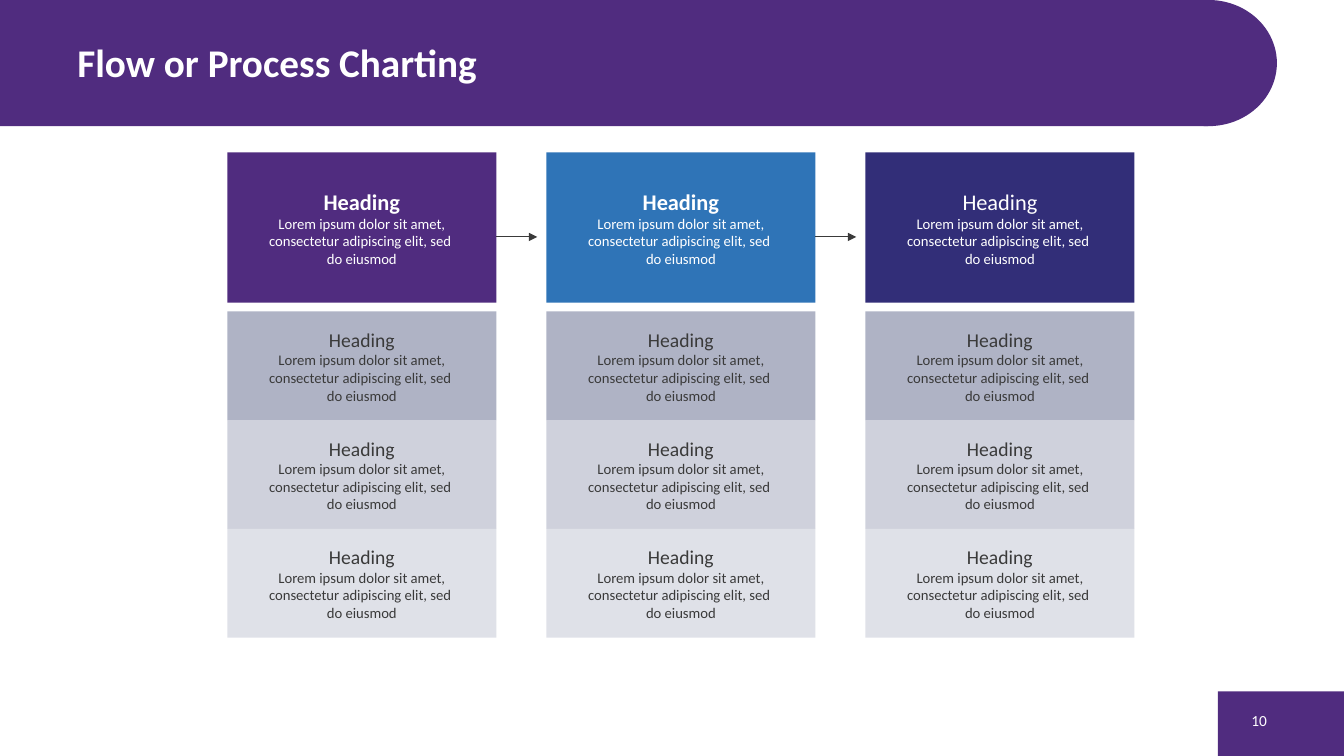
from lxml import etree
from pptx import Presentation
from pptx import util as u
from pptx.dml.color import RGBColor
from pptx.enum import shapes, text
from pptx.oxml.ns import qn

COLOURS = {
    "purple": "502C7F", "blue": "2F74B7", "navy": "322E78",
    "dark_row": "AFB3C5", "mid_row": "CFD1DC", "light_row": "DFE1E8",
    "ink": "3A3A3A", "white": "FFFFFF",
}
BODY = "Lorem ipsum dolor sit amet, consectetur adipiscing elit, sed \ndo eiusmod"


class SlideBuilder:
    font_name = "Calibri"

    def __init__(self, slide):
        self.slide = slide

    def colour(self, name):
        return RGBColor.from_string(COLOURS[name])

    def style(self, paragraph, size, colour, bold=False, align=text.PP_ALIGN.LEFT):
        paragraph.alignment = align
        for run in paragraph.runs:
            run.font.name = self.font_name
            run.font.size = u.Pt(size)
            run.font.bold = bold
            run.font.color.rgb = self.colour(colour)

    def block(self, left, top, width, height, fill,
              preset=shapes.MSO_SHAPE.RECTANGLE):
        """Add a plain filled shape without outline."""
        shape = self.slide.shapes.add_shape(
            preset, u.Cm(left), u.Cm(top), u.Cm(width), u.Cm(height))
        shape.shadow.inherit = False
        shape.fill.solid()
        shape.fill.fore_color.rgb = self.colour(fill)
        shape.line.fill.background()
        return shape

    def card(self, left, top, width, height, fill, ink, heading_size, bold=False):
        """Add a block with a centred heading and body text."""
        frame = self.block(left, top, width, height, fill).text_frame
        frame.word_wrap = True
        frame.vertical_anchor = text.MSO_ANCHOR.MIDDLE
        frame.margin_left = frame.margin_right = u.Cm(0.51)
        frame.margin_top = frame.margin_bottom = u.Cm(0.13)
        heading = frame.paragraphs[0]
        heading.text = "Heading"
        self.style(heading, heading_size, ink, bold, text.PP_ALIGN.CENTER)
        body = frame.add_paragraph()
        body.text = BODY
        self.style(body, 10.5, ink, align=text.PP_ALIGN.CENTER)

    def label(self, left, top, width, height, words, size, bold=False,
              align=text.PP_ALIGN.LEFT):
        box = self.slide.shapes.add_textbox(
            u.Cm(left), u.Cm(top), u.Cm(width), u.Cm(height))
        frame = box.text_frame
        frame.word_wrap = True
        frame.vertical_anchor = text.MSO_ANCHOR.MIDDLE
        frame.text = words
        self.style(frame.paragraphs[0], size, "white", bold, align)

    def arrow(self, start, end, y):
        connector = self.slide.shapes.add_connector(
            shapes.MSO_CONNECTOR.STRAIGHT,
            u.Cm(start), u.Cm(y), u.Cm(end), u.Cm(y))
        connector.line.color.rgb = self.colour("ink")
        connector.line.width = u.Pt(0.75)
        tail = etree.SubElement(connector.line._get_or_add_ln(), qn("a:tailEnd"))
        tail.set("type", "triangle")
        etree.SubElement(connector._element.spPr, qn("a:effectLst"))


def main():
    deck = Presentation()
    deck.slide_width, deck.slide_height = u.Cm(33.87), u.Cm(19.05)
    builder = SlideBuilder(deck.slides.add_slide(deck.slide_layouts[6]))

    builder.block(30.69, 17.42, 3.18, 1.63, "purple")
    builder.block(0, 0, 30.45, 3.18, "purple")
    builder.block(28.73, 0, 3.45, 3.18, "purple", shapes.MSO_SHAPE.OVAL)
    builder.label(1.7, 0.2, 25.4, 2.74, "Flow or Process Charting", 28, bold=True)
    builder.label(30.91, 17.65, 1.27, 1.02, "10", 11, align=text.PP_ALIGN.RIGHT)

    first_left, column_pitch, card_width = 5.73, 8.04, 6.78
    step_top, step_height = 3.84, 3.79
    rows_top, row_height = 7.85, 2.74
    steps = [("purple", True), ("blue", True), ("navy", False)]
    lefts = [first_left + column_pitch * i for i in range(len(steps))]

    for left, (fill, bold) in zip(lefts, steps):
        builder.card(left, step_top, card_width, step_height, fill, "white", 16, bold)
    for row, fill in enumerate(["dark_row", "mid_row", "light_row"]):
        for left in lefts:
            builder.card(left, rows_top + row * row_height, card_width, row_height,
                         fill, "ink", 14)
    for left, next_left in zip(lefts, lefts[1:]):
        builder.arrow(left + card_width, next_left - 0.23, 5.97)

    deck.save("out.pptx")


if __name__ == "__main__":
    main()
